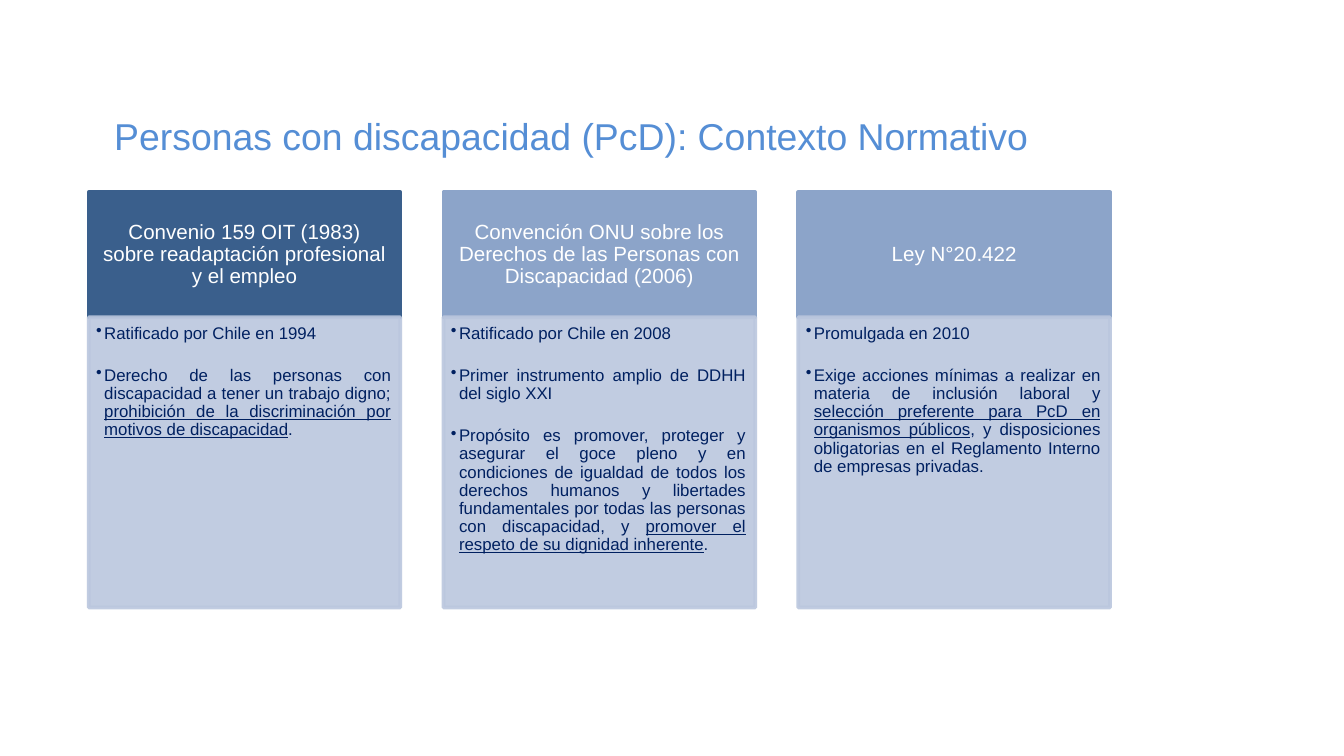
from pptx import Presentation
from pptx.dml.color import RGBColor
from pptx.enum.shapes import MSO_SHAPE
from pptx.enum.text import MSO_ANCHOR, MSO_AUTO_SIZE, PP_ALIGN
from pptx.oxml.ns import qn
from pptx.util import Pt
from lxml import etree

RECT = MSO_SHAPE.RECTANGLE
TOP, MIDDLE = MSO_ANCHOR.TOP, MSO_ANCHOR.MIDDLE
LEFT, CENTER, JUSTIFY = PP_ALIGN.LEFT, PP_ALIGN.CENTER, PP_ALIGN.JUSTIFY
FIXED = MSO_AUTO_SIZE.NONE

SKY = RGBColor(0x55, 0x8E, 0xD5)
DEEP = RGBColor(0x3A, 0x5F, 0x8C)
SOFT = RGBColor(0x8C, 0xA4, 0xC9)
PALE = RGBColor(0xBB, 0xC7, 0xDE)
NAVY = RGBColor(0x00, 0x20, 0x60)
WHITE = RGBColor(0xFF, 0xFF, 0xFF)

# Content: each law has a heading, a colour and points;
# odd-numbered pieces of a point (the second, and so on) are underlined
TITLE = "Personas con discapacidad (PcD): Contexto Normativo"
LAWS = [
    ("Convenio 159 OIT (1983) sobre readaptación profesional y el empleo", DEEP, [
        ["Ratificado por Chile en 1994"],
        ["Derecho de las personas con discapacidad a tener un trabajo digno; ",
         "prohibición de la discriminación por motivos de discapacidad", "."],
    ]),
    ("Convención ONU sobre los Derechos de las Personas con Discapacidad (2006)", SOFT, [
        ["Ratificado por Chile en 2008"],
        ["Primer instrumento amplio de DDHH del siglo XXI"],
        ["Propósito es promover, proteger y asegurar el goce pleno y en "
         "condiciones de igualdad de todos los derechos humanos y libertades "
         "fundamentales por todas las personas con discapacidad, y ",
         "promover el respeto de su dignidad inherente", "."],
    ]),
    ("Ley N°20.422", SOFT, [
        ["Promulgada en 2010"],
        ["Exige acciones mínimas a realizar en materia de inclusión laboral y ",
         "selección preferente para PcD en organismos públicos",
         ", y disposiciones obligatorias en el Reglamento Interno de empresas privadas."],
    ]),
]

# Grid, in points
X, STEP, WIDTH = 47.5, 190.1, 167
HEAD_Y, HEAD_H = 103, 67
BODY_Y, BODY_H = HEAD_Y + HEAD_H, 155.5
INDENT, GAP = 4.3, 12.8

# Formats
TITLE_FONT = {"name": "Arial", "size": Pt(20)}
HEAD_FONT = {"name": "Arial", "size": Pt(11)}
BODY_FONT = {"name": "Arial", "size": Pt(9)}
HEAD_FRAME = {"word_wrap": True, "vertical_anchor": MIDDLE,
              "margin_left": Pt(6.2), "margin_right": Pt(6.2),
              "margin_top": Pt(3.6), "margin_bottom": Pt(3.6)}
BODY_FRAME = {"word_wrap": True, "vertical_anchor": TOP,
              "margin_left": Pt(4), "margin_right": Pt(5.2),
              "margin_top": Pt(4), "margin_bottom": Pt(6)}
TITLE_BOX = {"left": Pt(54), "top": Pt(57), "width": Pt(583), "height": Pt(31.5)}
TITLE_FRAME = {"word_wrap": True, "vertical_anchor": TOP, "auto_size": FIXED}


def put(thing, form):
    for key, value in form.items():
        setattr(thing, key, value)


def style(font, form, color):
    put(font, form)
    font.color.rgb = color


def panel(x, y, height, color, form):
    box = slide.shapes.add_shape(RECT, Pt(x), Pt(y), Pt(WIDTH), Pt(height))
    box.shadow.inherit = False
    box.fill.solid()
    box.fill.fore_color.rgb = color
    box.line.color.rgb = color
    box.line.width = Pt(2)
    put(box.text_frame, form)
    return box


def fade(box, percent):
    for clr in box._element.spPr.iter(qn("a:srgbClr")):
        etree.SubElement(clr, qn("a:alpha")).set("val", str(percent * 1000))


def bullet(para):
    props = para._p.get_or_add_pPr()
    props.set("marL", str(Pt(INDENT)))
    props.set("indent", str(-Pt(INDENT)))
    etree.SubElement(props, qn("a:buChar")).set("char", "•")


deck = Presentation()
deck.slide_width, deck.slide_height = Pt(720), Pt(405)
slide = deck.slides.add_slide(deck.slide_layouts[5])

# Title
title = slide.shapes.title
put(title, TITLE_BOX)
put(title.text_frame, TITLE_FRAME)
title.text_frame.text = TITLE
para = title.text_frame.paragraphs[0]
para.alignment = LEFT
style(para.runs[0].font, TITLE_FONT, SKY)

# Columns
for col, (name, color, points) in enumerate(LAWS):
    x = X + col * STEP

    # Heading
    head = panel(x, HEAD_Y, HEAD_H, color, HEAD_FRAME)
    para = head.text_frame.paragraphs[0]
    para.text = name
    put(para, {"alignment": CENTER, "line_spacing": 0.9})
    style(para.runs[0].font, HEAD_FONT, WHITE)

    # Points
    body = panel(x, BODY_Y, BODY_H, PALE, BODY_FRAME)
    fade(body, 90)
    frame = body.text_frame
    for row, pieces in enumerate(points):
        para = frame.add_paragraph() if row else frame.paragraphs[0]
        bullet(para)
        put(para, {"alignment": JUSTIFY, "line_spacing": 0.9,
                   "space_before": Pt(GAP if row else 0)})
        for num, text in enumerate(pieces):
            run = para.add_run()
            run.text = text
            style(run.font, BODY_FONT, NAVY)
            run.font.underline = num % 2 == 1

deck.save("out.pptx")
